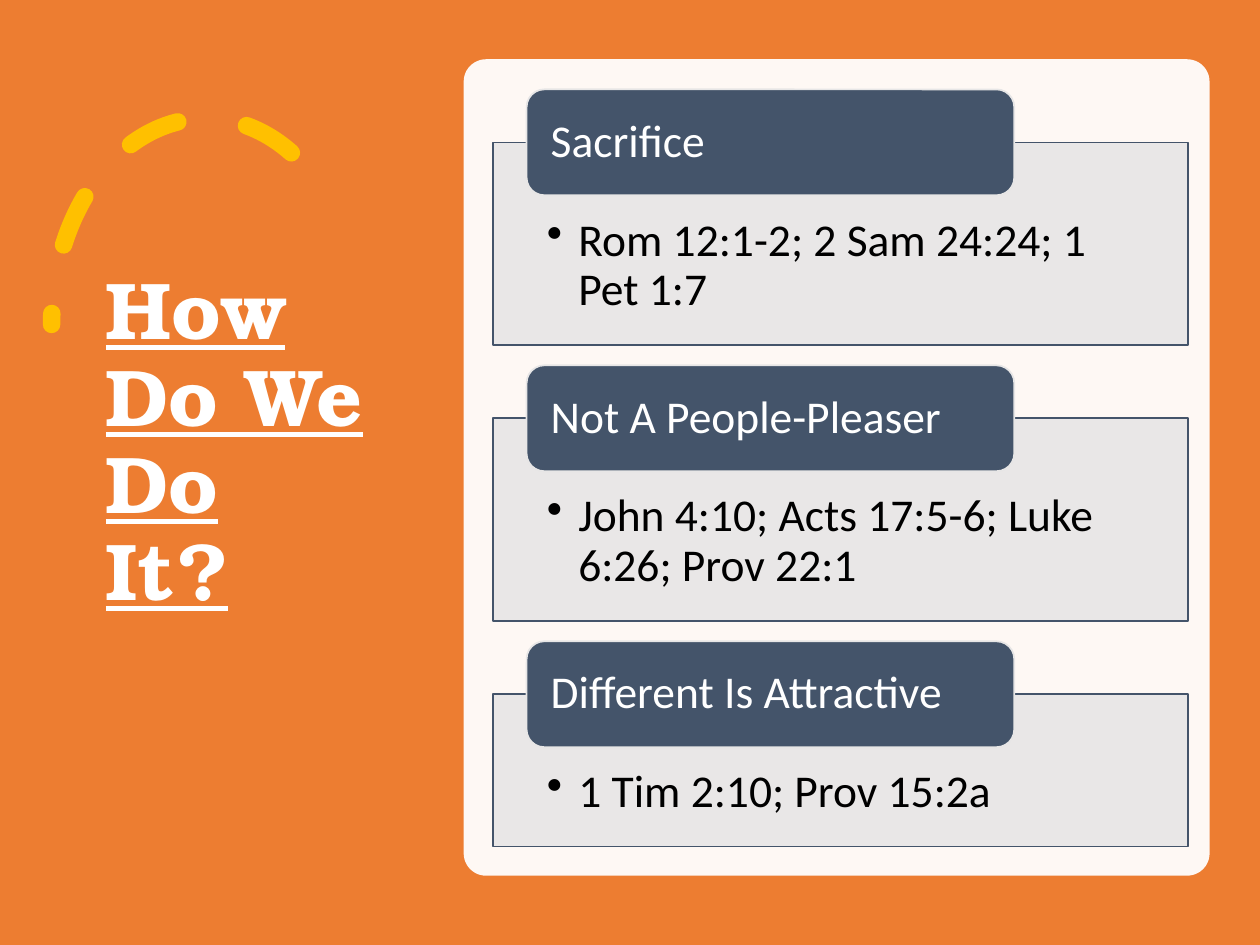
from lxml import etree
from pptx import Presentation
from pptx.dml.color import RGBColor
from pptx.enum import dml, shapes, text
from pptx.oxml import ns
from pptx.util import Inches, Pt

ORANGE = RGBColor(0xED, 0x7D, 0x31)
GOLD = RGBColor(0xFF, 0xC0, 0x00)
NAVY = RGBColor(0x44, 0x54, 0x6A)
GRAY = RGBColor(0xE7, 0xE6, 0xE6)
WHITE = RGBColor(0xFF, 0xFF, 0xFF)
BLACK = RGBColor(0x00, 0x00, 0x00)

SECTIONS = [
    ("Sacrifice", "Rom 12:1-2; 2 Sam 24:24; 1 Pet 1:7", 1.61),
    ("Not A People-Pleaser", "John 4:10; Acts 17:5-6; Luke 6:26; Prov 22:1", 1.61),
    ("Different Is Attractive", "1 Tim 2:10; Prov 15:2a", 1.21),
]

prs = Presentation()
prs.slide_width, prs.slide_height = Inches(10), Inches(7.5)
slide = prs.slides.add_slide(prs.slide_layouts[5])


def add_box(kind, left, top, width, height, fill=None, line=None, alpha=None):
    """Add a preset shape; alpha is the opacity of the fill in percent."""
    sp = slide.shapes.add_shape(
        kind, Inches(left), Inches(top), Inches(width), Inches(height))
    sp.shadow.inherit = False
    if fill is None:
        sp.fill.background()
    else:
        sp.fill.solid()
        sp.fill.fore_color.rgb = fill
    if alpha:
        color = sp.fill._xPr.find(".//" + ns.qn("a:srgbClr"))
        etree.SubElement(color, ns.qn("a:alpha"), val=str(alpha * 1000))
    if line is None:
        sp.line.fill.background()
    else:
        sp.line.color.rgb = line
        sp.line.width = Pt(1)
    return sp


def write(sp, words, size=26, font="Calibri", color=WHITE, bold=False,
          underline=False, anchor=text.MSO_ANCHOR.MIDDLE,
          insets=(0.1, 0.05, 0.1, 0.05), bullet=False):
    tf = sp.text_frame
    tf.word_wrap = True
    tf.auto_size = text.MSO_AUTO_SIZE.NONE
    tf.vertical_anchor = anchor
    tf.margin_left, tf.margin_top, tf.margin_right, tf.margin_bottom = map(Inches, insets)
    p = tf.paragraphs[0]
    p.alignment = text.PP_ALIGN.LEFT
    p.line_spacing = 0.9
    if bullet:
        pPr = p._p.get_or_add_pPr()
        pPr.set("marL", str(Inches(0.25)))
        pPr.set("indent", str(-Inches(0.25)))
        etree.SubElement(pPr, ns.qn("a:buChar"), char="•")
    r = p.add_run()
    r.text = words
    r.font.size, r.font.name = Pt(size), font
    r.font.bold, r.font.underline = bold, underline
    r.font.color.rgb = color


# Backdrop and dashed arc
add_box(shapes.MSO_SHAPE.RECTANGLE, 0, 0, 10, 7.5, ORANGE)
arc = add_box(shapes.MSO_SHAPE.ARC, 0.41, 0.94, 2.45, 3.27, line=GOLD)
arc.adjustments[0], arc.adjustments[1] = 146.13, 0
arc._element.spPr.find(ns.qn("a:xfrm")).set("flipH", "1")
arc.line.width = Pt(10)
arc.line.dash_style = dml.MSO_LINE.DASH
arc.line._ln.set("cap", "rnd")

# Title, raised above the backdrop
title = slide.shapes.title
slide.shapes._spTree.append(title._element)
title.left, title.top = Inches(0.74), Inches(0.48)
title.width, title.height = Inches(2.28), Inches(6.09)
write(title, "How Do We Do It?", size=46, font="TeX Gyre Bonum", bold=True,
      underline=True, insets=(0.1, 0.05, 0.12, 0.05))

# Panel with one headed box per section
panel = add_box(shapes.MSO_SHAPE.ROUNDED_RECTANGLE, 3.68, 0.47, 5.92, 6.48, WHITE, alpha=95)
panel.adjustments[0] = 0.03

top = 0.71
for heading, verses, height in SECTIONS:
    body = add_box(shapes.MSO_SHAPE.RECTANGLE, 3.91, top + 0.42, 5.52, height,
                   GRAY, NAVY, alpha=90)
    write(body, verses, color=BLACK, anchor=text.MSO_ANCHOR.TOP,
          insets=(0.43, 0.59, 0.43, 0.2), bullet=True)
    tab = add_box(shapes.MSO_SHAPE.ROUNDED_RECTANGLE, 4.18, top, 3.87, 0.84, NAVY, GRAY)
    write(tab, heading, insets=(0.15, 0, 0.15, 0))
    top += height + 0.58

prs.save("out.pptx")
